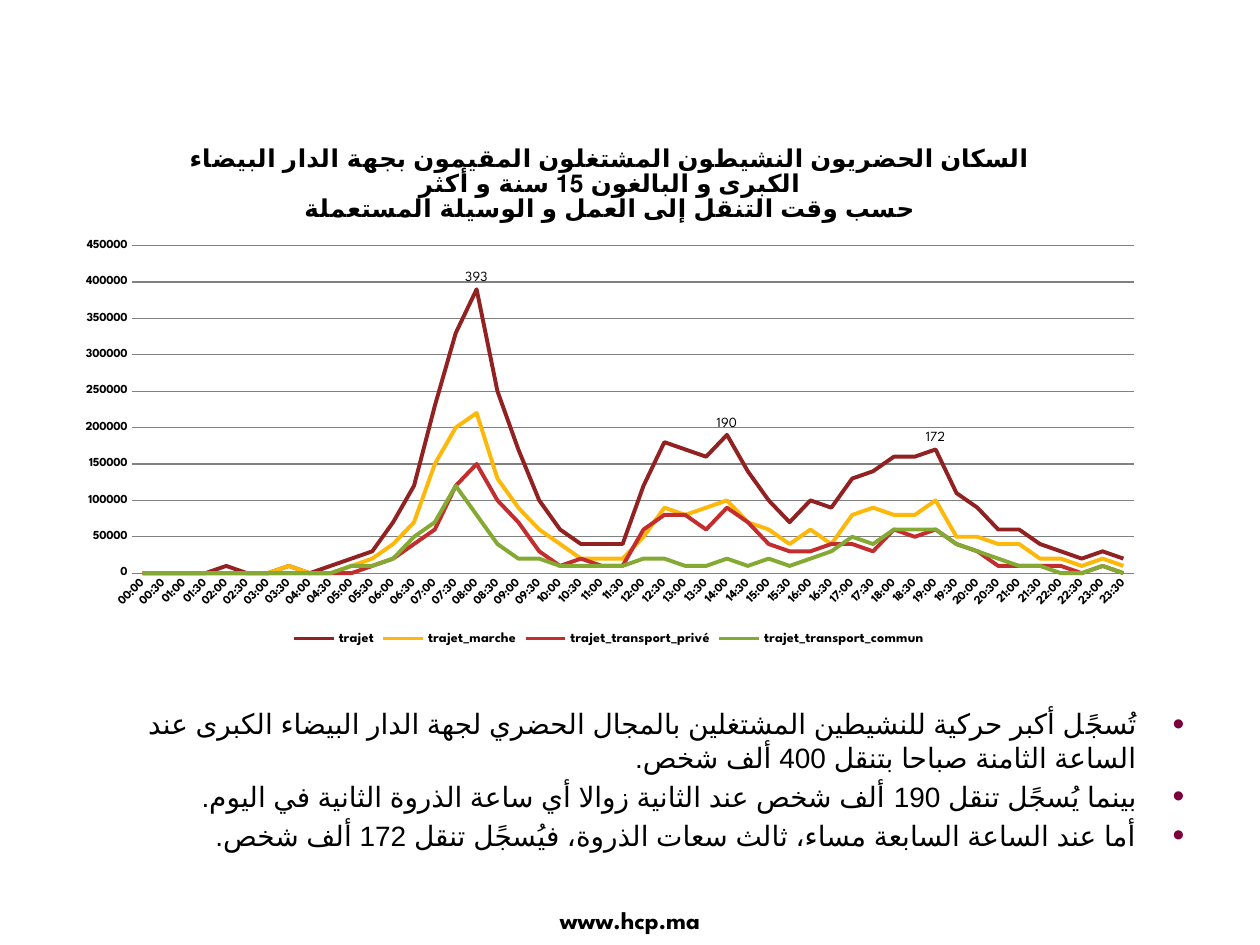
from lxml.etree import SubElement
from pptx import Presentation
from pptx.chart.data import CategoryChartData
from pptx.dml.color import RGBColor
from pptx.enum.chart import (XL_CHART_TYPE, XL_LABEL_POSITION,
                             XL_LEGEND_POSITION, XL_TICK_MARK)
from pptx.enum.text import MSO_ANCHOR, PP_ALIGN
from pptx.oxml.ns import qn
from pptx.util import Inches, Pt

FACE = "League Spartan"
BLACK = RGBColor(0x00, 0x00, 0x00)
GRAY = RGBColor(0x80, 0x80, 0x80)
PLUM = RGBColor(0x7B, 0x00, 0x3B)

TITLE = ("السكان الحضريون النشيطون المشتغلون المقيمون بجهة الدار البيضاء "
         "الكبرى و البالغون 15 سنة و أكثر\n"
         "حسب وقت التنقل إلى العمل و الوسيلة المستعملة")
NOTES = [
    "تُسجًل أكبر حركية للنشيطين المشتغلين بالمجال الحضري لجهة الدار البيضاء "
    "الكبرى عند الساعة الثامنة صباحا بتنقل 400 ألف شخص.",
    "بينما يُسجًل تنقل 190 ألف شخص عند الثانية زوالا أي ساعة الذروة الثانية في اليوم.",
    "أما عند الساعة السابعة مساء، ثالث سعات الذروة، فيُسجًل تنقل 172 ألف شخص.",
]
HOURS = [f"{hour:02}:{half}" for hour in range(24) for half in ("00", "30")]
PEAKS = {"08:00": "393", "14:00": "190", "19:00": "172"}
# Trips in tens of thousands, one value each half hour
TRIPS = [
    ("trajet", RGBColor(0x92, 0x21, 0x22),
     [0, 0, 0, 0, 1, 0, 0, 1, 0, 1, 2, 3, 7, 12, 23, 33, 39, 25, 17, 10, 6, 4, 4, 4,
      12, 18, 17, 16, 19, 14, 10, 7, 10, 9, 13, 14, 16, 16, 17, 11, 9, 6, 6, 4, 3, 2, 3, 2]),
    ("trajet_marche", RGBColor(0xFE, 0xB8, 0x0A),
     [0, 0, 0, 0, 0, 0, 0, 1, 0, 0, 1, 2, 4, 7, 15, 20, 22, 13, 9, 6, 4, 2, 2, 2,
      5, 9, 8, 9, 10, 7, 6, 4, 6, 4, 8, 9, 8, 8, 10, 5, 5, 4, 4, 2, 2, 1, 2, 1]),
    ("trajet_transport_privé", RGBColor(0xC3, 0x2D, 0x2E),
     [0, 0, 0, 0, 0, 0, 0, 0, 0, 0, 0, 1, 2, 4, 6, 12, 15, 10, 7, 3, 1, 2, 1, 1,
      6, 8, 8, 6, 9, 7, 4, 3, 3, 4, 4, 3, 6, 5, 6, 4, 3, 1, 1, 1, 1, 0, 1, 0]),
    ("trajet_transport_commun", RGBColor(0x84, 0xAA, 0x33),
     [0, 0, 0, 0, 0, 0, 0, 0, 0, 0, 1, 1, 2, 5, 7, 12, 8, 4, 2, 2, 1, 1, 1, 1,
      2, 2, 1, 1, 2, 1, 2, 1, 2, 3, 5, 4, 6, 6, 6, 4, 3, 2, 1, 1, 0, 0, 1, 0]),
]


def style(font, size, bold=False):
    for name, value in {"name": FACE, "size": Pt(size), "bold": bold}.items():
        setattr(font, name, value)
    font.fill.solid()
    font.fill.fore_color.rgb = BLACK


def set_cs(run):
    """Name the face and language for Arabic script."""
    props = run.font._element
    props.set("lang", "ar-MA")
    SubElement(props, qn("a:cs"), typeface="Arial")


def place(shape, box):
    for name, value in zip(("left", "top", "width", "height"), box):
        setattr(shape, name, Inches(value))


def set_plot(area, box, plot):
    """Fix the inner plot, given in inches from the corner of the chart."""
    for old in area.findall(qn("c:layout")):
        area.remove(old)
    layout = SubElement(area, qn("c:layout"))
    area.insert(0, layout)
    manual = SubElement(layout, qn("c:manualLayout"))
    parts = {"layoutTarget": "inner", "xMode": "edge", "yMode": "edge"}
    for tag, length, whole in zip("xywh", plot, box[2:] * 2):
        parts[tag] = length / whole
    for tag, value in parts.items():
        SubElement(manual, qn(f"c:{tag}"), val=str(value))


def format_axes(chart):
    hours, count = chart.category_axis, chart.value_axis
    for axis in (hours, count):
        axis.major_tick_mark = axis.minor_tick_mark = XL_TICK_MARK.NONE
        style(axis.tick_labels.font, 7, True)
    hours.format.line.color.rgb = GRAY
    hours._element.find(qn("c:txPr")).find(qn("a:bodyPr")).set("rot", "-2700000")
    count.minimum_scale, count.maximum_scale, count.major_unit = 0, 450000, 50000
    count.format.line.fill.background()
    grid = count.major_gridlines.format.line
    grid.color.rgb, grid.width = GRAY, Pt(0.75)


def add_trips(slide, box):
    data = CategoryChartData(number_format="0")
    data.categories = HOURS
    for name, _, values in TRIPS:
        data.add_series(name, [value * 10000 for value in values])
    chart = slide.shapes.add_chart(
        XL_CHART_TYPE.LINE, *map(Inches, box), data).chart
    style(chart.font, 8, True)

    chart.has_title = True
    chart.chart_title.include_in_layout = False
    frame = chart.chart_title.text_frame
    frame.text = TITLE
    for para in frame.paragraphs:
        for run in para.runs:
            style(run.font, 14, True)

    chart.has_legend = True
    chart.legend.position = XL_LEGEND_POSITION.BOTTOM
    chart.legend.include_in_layout = False
    style(chart.legend.font, 8, True)
    format_axes(chart)
    set_plot(chart._chartSpace.chart.plotArea, box, (0.55, 0.96, 7.95, 2.6))

    plot = chart.plots[0]
    plot.vary_by_categories = False
    for series, (_, color, _) in zip(plot.series, TRIPS):
        series.smooth = False
        series.format.line.color.rgb = color
        series.format.line.width = Pt(2.25)
    for hour, text in PEAKS.items():
        label = plot.series[0].points[HOURS.index(hour)].data_label
        label.text_frame.text = text
        style(label.text_frame.paragraphs[0].runs[0].font, 8)
        label.position = XL_LABEL_POSITION.ABOVE


def fill_notes(body, box):
    place(body, box)
    frame = body.text_frame
    frame.word_wrap = True
    frame.vertical_anchor = MSO_ANCHOR.TOP
    for index, text in enumerate(NOTES):
        para = frame.add_paragraph() if index else frame.paragraphs[0]
        para.alignment = PP_ALIGN.RIGHT
        para.space_before = Pt(3 if index else 0)
        props = para._p.get_or_add_pPr()
        indent = Inches(0.38)
        for key, value in {"marL": indent, "indent": -indent, "rtl": 1}.items():
            props.set(key, str(value))
        tint = SubElement(props, qn("a:buClr"))
        SubElement(tint, qn("a:srgbClr"), val=str(PLUM))
        SubElement(props, qn("a:buSzPct"), val="120000")
        SubElement(props, qn("a:buChar"), char="•")
        run = para.add_run()
        run.text = text
        style(run.font, 16)
        set_cs(run)


def add_site(slide, box):
    frame = slide.shapes.add_textbox(*map(Inches, box)).text_frame
    frame.word_wrap = True
    para = frame.paragraphs[0]
    para.alignment = PP_ALIGN.CENTER
    run = para.add_run()
    run.text = "www.hcp.ma"
    style(run.font, 14, True)


def main():
    deck = Presentation()
    deck.slide_width, deck.slide_height = Inches(10), Inches(7.5)
    slide = deck.slides.add_slide(deck.slide_layouts[1])
    title = slide.shapes.title.element
    title.getparent().remove(title)
    add_site(slide, (3.82, 7.13, 2.36, 0.33))
    fill_notes(slide.placeholders[1], (0.43, 5.56, 9.07, 1.26))
    add_trips(slide, (0.5, 0.99, 8.67, 4.17))
    deck.save("out.pptx")


if __name__ == "__main__":
    main()
